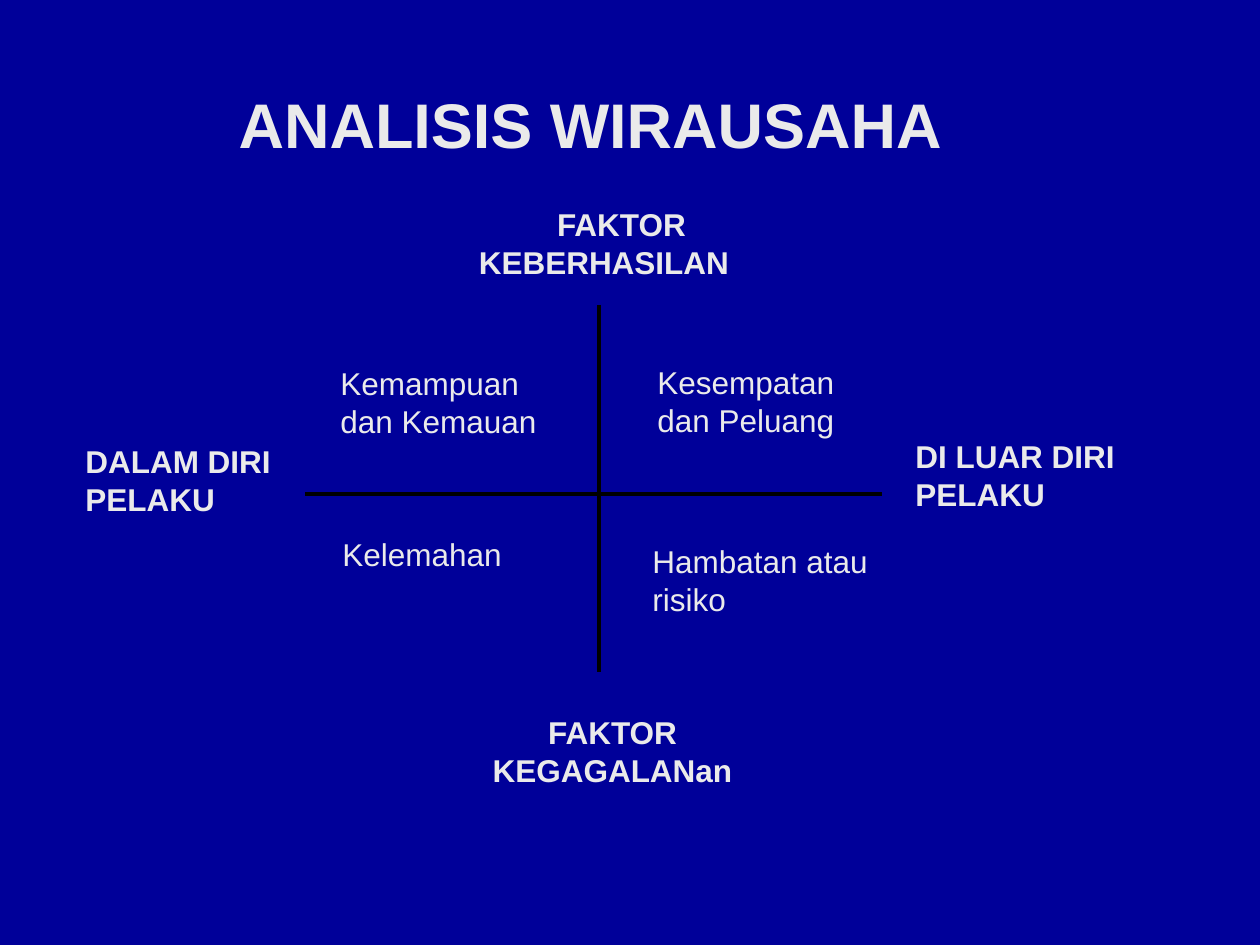
from dataclasses import dataclass

from lxml import etree
from pptx import Presentation
from pptx.dml.color import RGBColor
from pptx.enum.shapes import MSO_CONNECTOR
from pptx.enum.text import MSO_ANCHOR, MSO_AUTO_SIZE, PP_ALIGN
from pptx.oxml.ns import qn
from pptx.util import Pt

STRAIGHT = MSO_CONNECTOR.STRAIGHT
MIDDLE, TOP = MSO_ANCHOR.MIDDLE, MSO_ANCHOR.TOP
LEFT, CENTER = PP_ALIGN.LEFT, PP_ALIGN.CENTER
FIT_SHAPE = MSO_AUTO_SIZE.SHAPE_TO_FIT_TEXT
SCALE = 914400 / 126


@dataclass(frozen=True)
class Theme:
    background: RGBColor = RGBColor(0x00, 0x00, 0x99)
    text: RGBColor = RGBColor(0xEA, 0xEA, 0xEA)
    axis: RGBColor = RGBColor(0x00, 0x00, 0x00)
    font: str = "Arial"
    title_size: float = 36
    label_size: float = 18
    axis_width: float = 2.25


THEME = Theme()


def px(*lengths):
    return [round(length * SCALE) for length in lengths]


def write(frame, text, size=THEME.label_size, bold=False, align=LEFT, anchor=TOP, wrap=True):
    frame.word_wrap = wrap
    frame.vertical_anchor = anchor
    frame.text = text
    for paragraph in frame.paragraphs:
        paragraph.alignment = align
        paragraph.font.name = THEME.font
        paragraph.font.size = Pt(size)
        paragraph.font.bold = bold
        paragraph.font.color.rgb = THEME.text


deck = Presentation()
deck.slide_width, deck.slide_height = px(1260, 945)
slide = deck.slides.add_slide(deck.slide_layouts[5])
slide.background.fill.solid()
slide.background.fill.fore_color.rgb = THEME.background

title = slide.shapes.title
title.left, title.top, title.width, title.height = px(226, 79, 729, 88)
write(title.text_frame, "ANALISIS WIRAUSAHA", size=THEME.title_size, bold=True, anchor=MIDDLE, wrap=False)
title.text_frame.auto_size = FIT_SHAPE

for x1, y1, x2, y2 in [(305, 494, 882, 494), (599, 305, 599, 672)]:
    axis = slide.shapes.add_connector(STRAIGHT, *px(x1, y1, x2, y2))
    axis.line.color.rgb = THEME.axis
    axis.line.width = Pt(THEME.axis_width)
    etree.SubElement(axis._element.spPr, qn("a:effectLst"))

factors = [
    ("FAKTOR\nKEBERHASILAN", (462, 199, 284, 76), CENTER),
    ("FAKTOR KEGAGALANan", (472, 707, 281, 102), CENTER),
    ("DALAM DIRI PELAKU", (73, 436, 241, 65), LEFT),
    ("DI LUAR DIRI PELAKU", (903, 431, 271, 76), LEFT),
]
for text, box, align in factors:
    factor = slide.shapes.add_textbox(*px(*box))
    write(factor.text_frame, text, bold=True, align=align)
    if "\n" in text:
        success_heading = factor.text_frame.paragraphs[0]
        success_heading._p.get_or_add_pPr().set("marL", str(px(35)[0]))

quadrants = [
    ("Kemampuan dan Kemauan", (328, 358, 252, 62)),
    ("Kesempatan dan Peluang", (645, 357, 252, 81)),
    ("Kelemahan", (330, 529, 242, 66)),
    ("Hambatan atau risiko", (640, 536, 262, 66)),
]
for text, box in quadrants:
    quadrant = slide.shapes.add_textbox(*px(*box))
    write(quadrant.text_frame, text)

deck.save("out.pptx")
